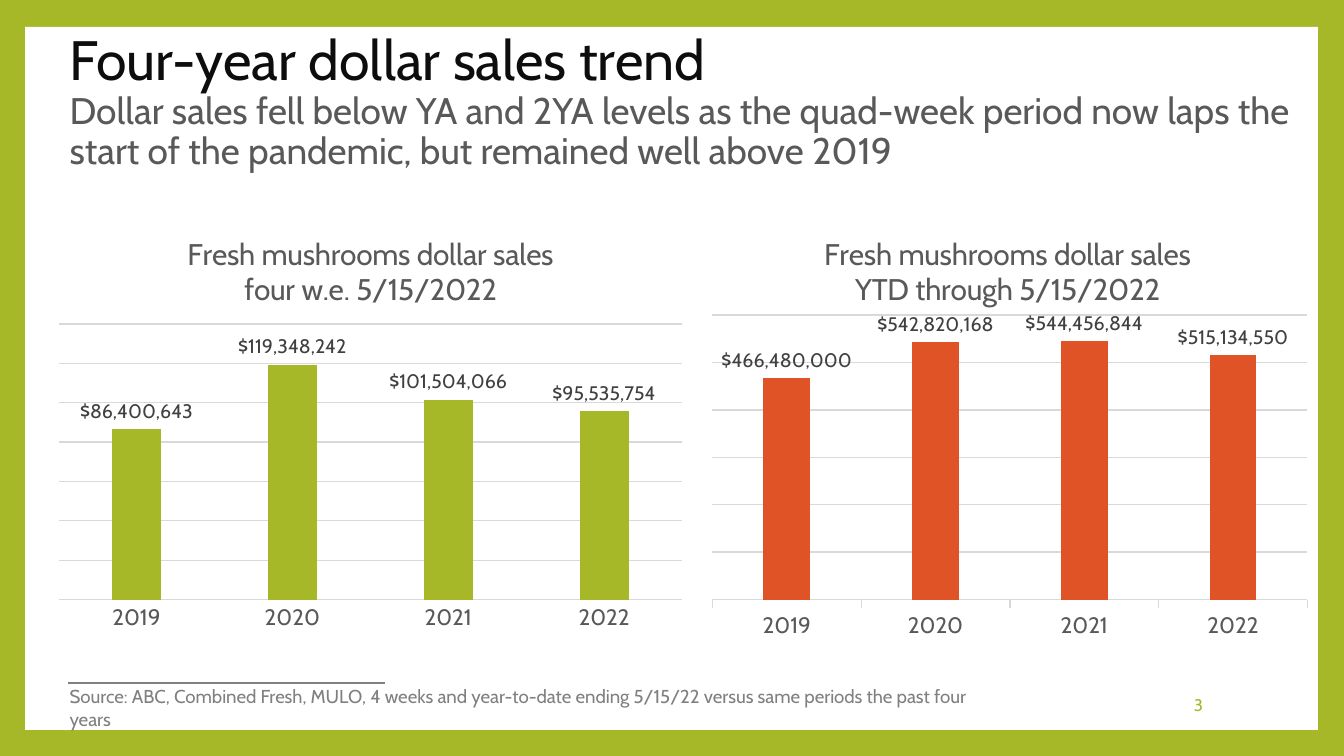
from lxml import etree
from pptx import Presentation
from pptx import util as u
from pptx.chart import data
from pptx.dml.color import RGBColor
from pptx.enum import chart as charts, shapes, text as texts
from pptx.oxml import ns

Pt = u.Pt
FONT = "Cabin"
COLORS = {
    "green": "A6B727", "orange": "DF5327", "white": "FFFFFF", "grid": "D9D9D9",
    "title": "0D0D0D", "body": "595959", "label": "404040", "source": "808080",
}
YEARS = ["2019", "2020", "2021", "2022"]
DOLLARS = "\\$#,##0"


def color(name):
    """Return the named colour."""
    return RGBColor.from_string(COLORS[name])


def style(font, size, name):
    """Set face, size and colour of a font."""
    font.name, font.size, font.bold = FONT, Pt(size), False
    font.color.rgb = color(name)


def write(paragraph, content, size=10, ink="body", align=None, spacing=None):
    """Append a formatted run to a paragraph."""
    run = paragraph.add_run()
    run.text = content
    style(run.font, size, ink)
    if align is not None:
        paragraph.alignment = align
    if spacing:
        paragraph.line_spacing = spacing


def add_box(slide, box, anchor=texts.MSO_ANCHOR.TOP):
    """Add a wrapping text box and return its first paragraph."""
    frame = slide.shapes.add_textbox(*map(Pt, box)).text_frame
    frame.word_wrap = True
    frame.vertical_anchor = anchor
    return frame.paragraphs[0]


def set_layout(parent, position, inner=False, **fractions):
    """Place a chart part by fractions of the chart area."""
    for old in parent.findall(ns.qn("c:layout")):
        parent.remove(old)
    layout = etree.Element(ns.qn("c:layout"))
    parent.insert(position, layout)
    manual = etree.SubElement(layout, ns.qn("c:manualLayout"))
    settings = {"layoutTarget": "inner"} if inner else {}
    settings.update(xMode="edge", yMode="edge", **fractions)
    for tag, value in settings.items():
        etree.SubElement(manual, ns.qn("c:" + tag)).set("val", str(value))


def add_panel(slide, box):
    """Draw the white panel and the rule above the source."""
    left, top, width, height = box
    panel = slide.shapes.add_shape(shapes.MSO_SHAPE.RECTANGLE, *map(Pt, box))
    panel.shadow.inherit = False
    panel.fill.solid()
    panel.fill.fore_color.rgb = color("white")
    panel.line.fill.background()
    start, rule = left + 23, top + 351.4
    line = slide.shapes.add_connector(
        shapes.MSO_CONNECTOR.STRAIGHT, Pt(start), Pt(rule), Pt(start + 170), Pt(rule))
    line.line.color.rgb = color("source")
    line.line.width = Pt(0.79)
    etree.SubElement(line.element.spPr, ns.qn("a:effectLst"))


def add_heading(slide, box, title, subtitle):
    """Write the title with its subtitle below."""
    paragraph = add_box(slide, box, texts.MSO_ANCHOR.MIDDLE)
    write(paragraph, title, size=29.7, ink="title", spacing=0.9)
    paragraph.add_line_break()
    write(paragraph, subtitle, size=19.8)


def add_footer(slide, box, source, number):
    """Write the source and the slide number."""
    left, top, width, height = box
    write(add_box(slide, (left, top, 502, height)), source, ink="source")
    paragraph = add_box(slide, (left + width - 101, top + 3.5, 101, 21.5),
                        texts.MSO_ANCHOR.MIDDLE)
    write(paragraph, number, size=9, ink="green", align=texts.PP_ALIGN.RIGHT)


def add_sales_chart(slide, box, title, values, fill, top_value, step, tick, plot):
    """Add a column chart of yearly sales."""
    chart_data = data.CategoryChartData(number_format=DOLLARS)
    chart_data.categories = YEARS
    chart_data.add_series("Series 1", values)
    chart = slide.shapes.add_chart(
        charts.XL_CHART_TYPE.COLUMN_CLUSTERED, *map(Pt, box), chart_data).chart
    style(chart.font, 10, "label")
    chart.has_legend = False

    chart.has_title = True
    frame = chart.chart_title.text_frame
    for index, line in enumerate(title):
        paragraph = frame.add_paragraph() if index else frame.paragraphs[0]
        write(paragraph, line, size=16, align=texts.PP_ALIGN.CENTER)
    chart.chart_title.include_in_layout = False
    set_layout(chart.element.find(".//" + ns.qn("c:title")), 1, x=0.2, y=0.05)
    set_layout(chart.element.find(".//" + ns.qn("c:plotArea")), 0, inner=True,
               **dict(zip("xywh", plot)))

    category = chart.category_axis
    category.major_tick_mark = tick
    category.format.line.color.rgb = color("grid")
    category.format.line.width = Pt(0.75)
    style(category.tick_labels.font, 12, "body")

    value = chart.value_axis
    value.visible = False
    value.minimum_scale, value.maximum_scale, value.major_unit = 0, top_value, step
    value.has_major_gridlines = True
    value.major_gridlines.format.line.color.rgb = color("grid")
    value.major_gridlines.format.line.width = Pt(0.75)

    bars = chart.plots[0]
    bars.gap_width, bars.overlap, bars.vary_by_categories = 219, -27, False
    series = bars.series[0]
    series.format.fill.solid()
    series.format.fill.fore_color.rgb = color(fill)
    labels = series.data_labels
    labels.show_value = True
    labels.position = charts.XL_LABEL_POSITION.OUTSIDE_END
    labels.number_format, labels.number_format_is_linked = DOLLARS, False
    style(labels.font, 10.5, "label")


def main():
    """Build and save the slide."""
    presentation = Presentation()
    presentation.slide_width, presentation.slide_height = Pt(720), Pt(405)
    slide = presentation.slides.add_slide(presentation.slide_layouts[6])
    slide.background.fill.solid()
    slide.background.fill.fore_color.rgb = color("green")

    add_panel(slide, (13.5, 14.4, 692.6, 376.6))
    add_heading(
        slide, (30.2, 26.6, 680.4, 56.9), "Four-year dollar sales trend",
        "Dollar sales fell below YA and 2YA levels as the quad-week period now laps "
        "the start of the pandemic, but remained well above 2019")
    add_sales_chart(
        slide, (31, 111.6, 334.8, 238.3),
        ("Fresh mushrooms dollar sales", "four w.e. 5/15/2022"),
        (86400643, 119348242, 101504066, 95535754), "green", 140e6, 20e6,
        charts.XL_TICK_MARK.NONE, (0, 0.26, 1, 0.62))
    add_sales_chart(
        slide, (371.5, 111.6, 339.1, 238.3),
        ("Fresh mushrooms dollar sales", "YTD through 5/15/2022"),
        (466480000, 542820168, 544456844, 515134550), "orange", 600e6, 100e6,
        charts.XL_TICK_MARK.OUTSIDE, (0.03, 0.24, 0.94, 0.64))
    add_footer(
        slide, (30.2, 363.6, 621.4, 19.4),
        "Source: ABC, Combined Fresh, MULO, 4 weeks and year-to-date ending 5/15/22 "
        "versus same periods the past four years", "3")
    presentation.save("out.pptx")


if __name__ == "__main__":
    main()
